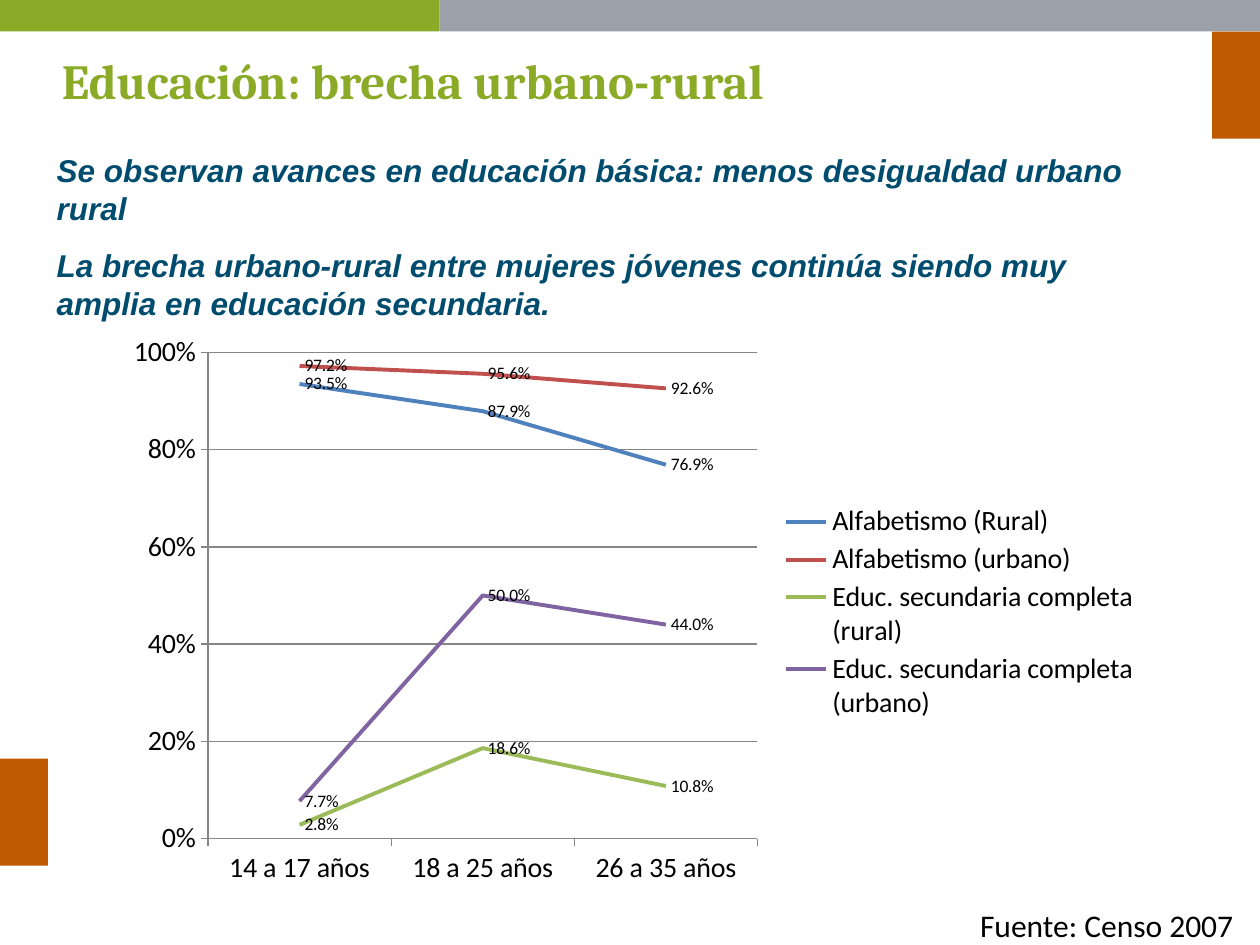
from dataclasses import dataclass

from lxml.etree import SubElement
from pptx import Presentation
from pptx.chart.data import CategoryChartData
from pptx.dml.color import RGBColor as Rgb
from pptx.enum.chart import XL_CHART_TYPE as ChartType
from pptx.enum.chart import XL_LABEL_POSITION as LabelPos
from pptx.enum.chart import XL_LEGEND_POSITION as LegendPos
from pptx.enum.chart import XL_TICK_MARK as Tick
from pptx.enum.shapes import MSO_SHAPE as Shape
from pptx.enum.text import MSO_ANCHOR as Anchor
from pptx.enum.text import MSO_AUTO_SIZE as AutoSize
from pptx.enum.text import PP_ALIGN as Align
from pptx.oxml import parse_xml
from pptx.oxml.ns import nsdecls, qn
from pptx.util import Inches, Pt

COLUMNS, ROWS = 100, 75


@dataclass(frozen=True)
class Theme:
    green: str = "8BAA27"
    grey: str = "9CA1A9"
    orange: str = "BF5A00"
    blue: str = "004C6F"
    black: str = "000000"
    axis: str = "868686"
    series: tuple = ("4F81BD", "C0504D", "9BBB59", "8064A2")
    heading_font: str = "Cambria"
    message_font: str = "Arial"
    chart_font: str = "Calibri"
    heading_size: int = 28
    message_size: int = 18
    axis_size: int = 16
    label_size: int = 10


class SlideBuilder:
    def __init__(self, deck, theme):
        self.deck, self.theme = deck, theme
        self.slide = deck.slides.add_slide(deck.slide_layouts[1])

    def area(self, column, row, columns, rows):
        """Turn grid units into left, top, width and height."""
        across, down = self.deck.slide_width / COLUMNS, self.deck.slide_height / ROWS
        return (round(column * across), round(row * down),
                round(columns * across), round(rows * down))

    def style(self, font, name, size, color, bold=False, italic=False):
        font.name, font.size = name, Pt(size)
        font.bold, font.italic = bold, italic
        font.color.rgb = Rgb.from_string(color)

    def place(self, holder, area):
        holder.left, holder.top, holder.width, holder.height = self.area(*area)
        frame = holder.text_frame
        frame.vertical_anchor, frame.auto_size = Anchor.TOP, AutoSize.NONE
        return frame

    def space(self, paragraph, size):
        paragraph.alignment = Align.LEFT
        paragraph.space_before, paragraph.space_after = Pt(size * 0.2), Pt(size * 0.4)

    def title(self, text, area):
        theme = self.theme
        heading = self.place(self.slide.shapes.title, area).paragraphs[0]
        self.space(heading, theme.heading_size)
        heading.line_spacing = 0.9
        run = heading.add_run()
        run.text = text
        self.style(run.font, theme.heading_font, theme.heading_size, theme.green, bold=True)

    def messages(self, texts, area):
        theme = self.theme
        frame = self.place(self.slide.placeholders[1], area)
        for index, text in enumerate(texts):
            message = frame.add_paragraph() if index else frame.paragraphs[0]
            self.space(message, theme.message_size)
            properties = message._p.get_or_add_pPr()
            properties.set("marL", "0")
            properties.set("indent", "0")
            SubElement(properties, qn("a:buNone"))
            run = message.add_run()
            run.text = text
            self.style(run.font, theme.message_font, theme.message_size, theme.blue,
                       bold=True, italic=True)

    def bar(self, color, area):
        bar = self.slide.shapes.add_shape(Shape.RECTANGLE, *self.area(*area))
        bar.shadow.inherit = False
        bar.fill.solid()
        bar.fill.fore_color.rgb = Rgb.from_string(color)
        bar.line.fill.background()

    def source(self, text, area):
        theme = self.theme
        frame = self.slide.shapes.add_textbox(*self.area(*area)).text_frame
        frame.word_wrap = True
        run = frame.paragraphs[0].add_run()
        run.text = text
        self.style(run.font, theme.chart_font, theme.message_size, theme.black)

    def line_chart(self, categories, rates, area, plot, legend):
        """Draw percentages as lines; plot and legend are shares of the chart."""
        theme = self.theme
        data = CategoryChartData(number_format="0.0%")
        data.categories = categories
        for name, values in rates.items():
            data.add_series(name, values)
        chart = self.slide.shapes.add_chart(ChartType.LINE, *self.area(*area), data).chart
        self.style(chart.font, theme.chart_font, theme.label_size, theme.black)
        chart.has_title = False
        chart.plots[0].vary_by_categories = False

        for series, color in zip(chart.plots[0].series, theme.series):
            series.smooth = False
            series.format.line.width = Pt(2.25)
            series.format.line.color.rgb = Rgb.from_string(color)
            labels = series.data_labels
            labels.show_value = True
            labels.number_format, labels.number_format_is_linked = "0.0%", False
            labels.position = LabelPos.RIGHT
            self.style(labels.font, theme.chart_font, theme.label_size, theme.black)

        rate_axis = chart.value_axis
        rate_axis.minimum_scale, rate_axis.maximum_scale = 0, 1
        rate_axis.major_unit = 0.2
        rate_axis.tick_labels.number_format = "0%"
        rate_axis.tick_labels.number_format_is_linked = False
        rate_axis.has_major_gridlines = True
        for axis in (chart.category_axis, rate_axis):
            axis.major_tick_mark = Tick.OUTSIDE
            self.style(axis.tick_labels.font, theme.chart_font, theme.axis_size, theme.black)
        for rule in (chart.category_axis, rate_axis, rate_axis.major_gridlines):
            rule.format.line.width = Pt(0.75)
            rule.format.line.color.rgb = Rgb.from_string(theme.axis)

        chart.has_legend = True
        chart.legend.position = LegendPos.RIGHT
        chart.legend.include_in_layout = False
        self.style(chart.legend.font, theme.chart_font, theme.axis_size, theme.black)
        self.fix_layout(chart._chartSpace.chart.plotArea, plot, inner=True)
        self.fix_layout(chart.legend._element, legend)

    def fix_layout(self, part, shares, inner=False):
        """Pin a chart part to the given shares of the chart's size."""
        for automatic in part.findall(qn("c:layout")):
            part.remove(automatic)
        target = '<c:layoutTarget val="inner"/>' if inner else ""
        modes = '<c:xMode val="edge"/><c:yMode val="edge"/>'
        sizes = "".join(f'<c:{key} val="{share}"/>' for key, share in zip("xywh", shares))
        layout = parse_xml(f'<c:layout {nsdecls("c")}><c:manualLayout>{target}{modes}{sizes}'
                           "</c:manualLayout></c:layout>")
        part.insert(0 if inner else 1, layout)


def main():
    deck = Presentation()
    deck.slide_width, deck.slide_height = Inches(10), Inches(7.5)
    theme = Theme()
    page = SlideBuilder(deck, theme)

    page.title("Educación: brecha urbano-rural", (3.9, 4, 93.1, 64.7))
    split, band, tab_width, tab_height = 34.9, 2.5, 3.8, 8.5
    page.bar(theme.grey, (split, 0, COLUMNS - split, band))
    page.bar(theme.orange, (COLUMNS - tab_width, band, tab_width, tab_height))
    page.bar(theme.green, (0, 0, split, band))
    page.bar(theme.orange, (0, 60.2, tab_width, tab_height))
    page.messages(
        ("Se observan avances en educación básica: menos desigualdad urbano rural",
         "La brecha urbano-rural entre mujeres jóvenes continúa siendo muy amplia "
         "en educación secundaria."),
        (3.5, 11.5, 90.6, 14.9))
    page.line_chart(
        ("14 a 17 años", "18 a 25 años", "26 a 35 años"),
        {"Alfabetismo (Rural)": (0.935, 0.879, 0.769),
         "Alfabetismo (urbano)": (0.972, 0.956, 0.926),
         "Educ. secundaria completa (rural)": (0.028, 0.186, 0.108),
         "Educ. secundaria completa (urbano)": (0.077, 0.5, 0.44)},
        area=(9.1, 25.7, 82.3, 45.4),
        plot=(0.09, 0.05, 0.53, 0.85), legend=(0.64, 0.31, 0.35, 0.39))
    page.source("Fuente: Censo 2007", (76.8, 71.4, 23.2, 4))
    deck.save("out.pptx")


if __name__ == "__main__":
    main()
